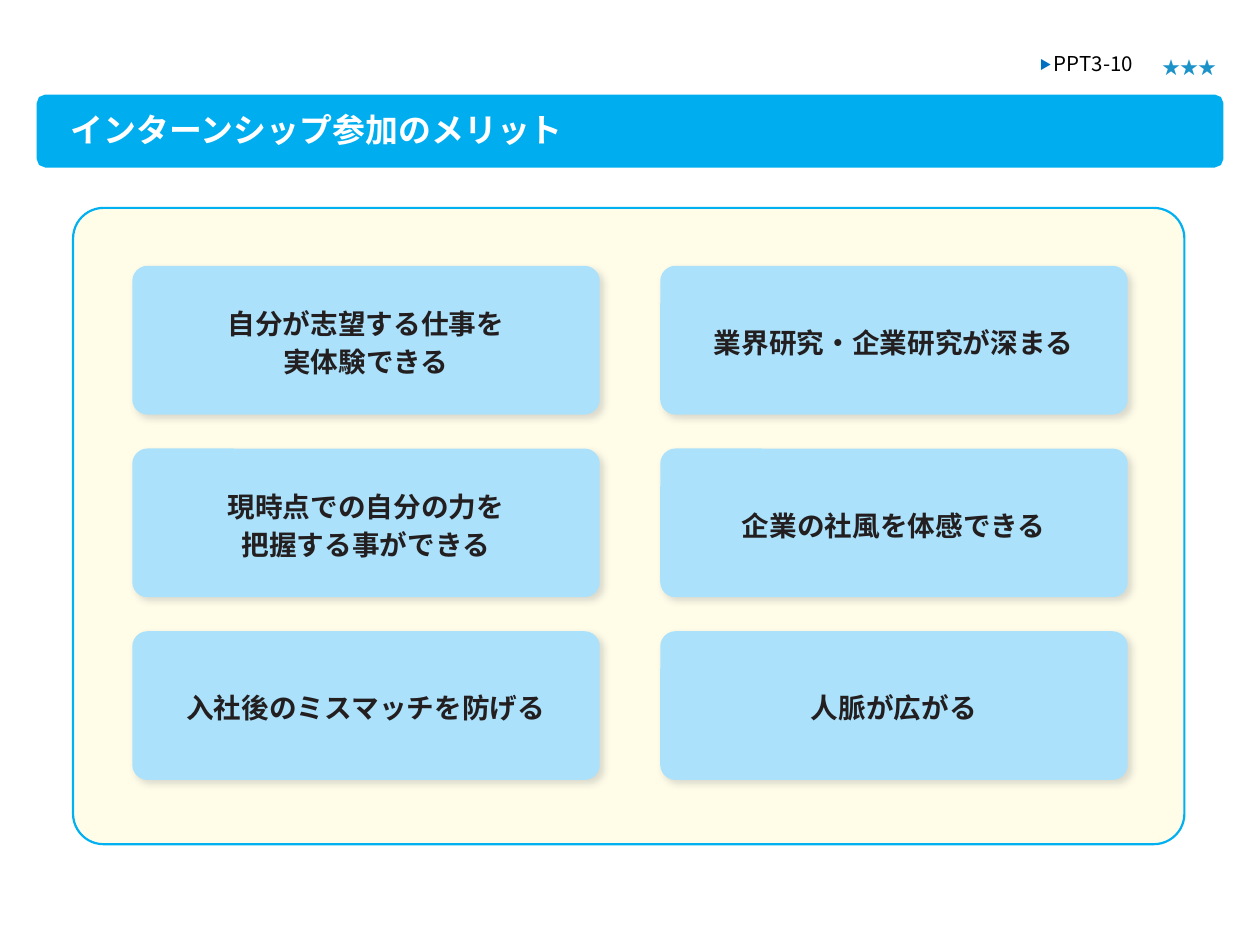
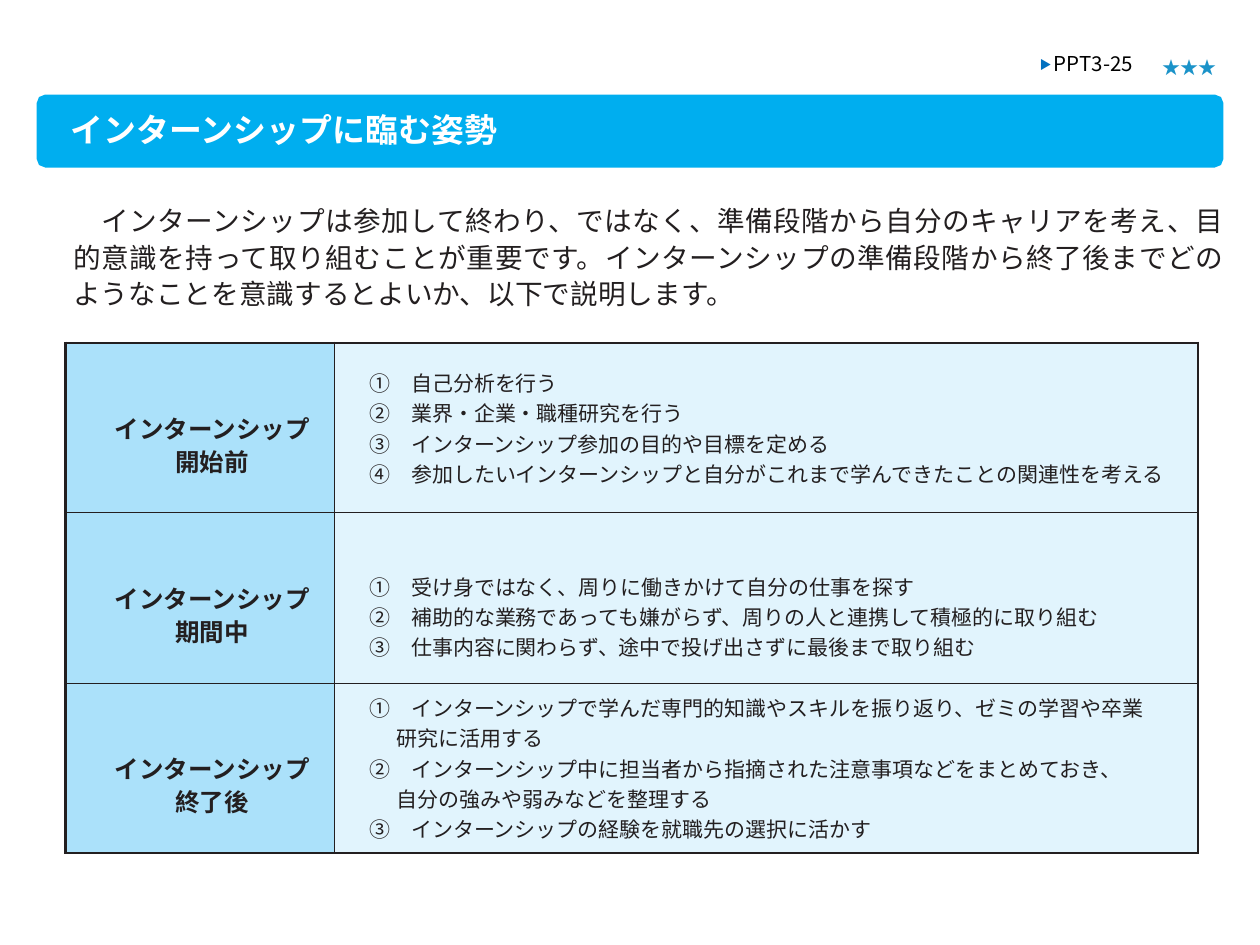
from lxml import etree
from pptx import Presentation
from pptx.dml.color import RGBColor
from pptx.enum.shapes import MSO_SHAPE
from pptx.enum.text import MSO_ANCHOR, MSO_AUTO_SIZE, PP_ALIGN
from pptx.oxml.ns import qn
from pptx.util import Inches, Pt

ROUNDED = MSO_SHAPE.ROUNDED_RECTANGLE
MIDDLE, TOP = MSO_ANCHOR.MIDDLE, MSO_ANCHOR.TOP
LEFT, CENTER, JUSTIFY = PP_ALIGN.LEFT, PP_ALIGN.CENTER, PP_ALIGN.JUSTIFY

FONT = "Noto Sans CJK JP"
INK, WHITE, BLACK = "231F20", "FFFFFF", "000000"
BAND, PANEL, PANEL_EDGE = "00AEEF", "FFFDE8", "00B0F0"
CARD, PALE = "ABE1FA", "E1F4FD"
ARROW, STAR, SHADOW = "0070C0", "1B93C9", "A6A6A6"

FRAME_FORMAT = {
    "margin_left": 0, "margin_top": 0, "margin_right": 0, "margin_bottom": 0,
    "word_wrap": True, "auto_size": MSO_AUTO_SIZE.NONE, "vertical_anchor": MIDDLE,
}


def paint(fill, color):
    fill.solid()
    fill.fore_color.rgb = RGBColor.from_string(color)


def write(frame, lines, size, color=INK, bold=False, align=LEFT, line_height=None):
    """Write one paragraph per line; a line is a string or a list of runs and line breaks."""
    for name, value in FRAME_FORMAT.items():
        setattr(frame, name, value)
    for number, line in enumerate(lines):
        paragraph = frame.add_paragraph() if number else frame.paragraphs[0]
        paragraph.alignment = align
        paragraph.space_before = Pt(0)
        if line_height:
            paragraph.line_spacing = Pt(line_height)
        for piece in [line] if isinstance(line, str) else line:
            if piece == "\n":
                paragraph.add_line_break()
                continue
            run = paragraph.add_run()
            run.text = piece
            run.font.size, run.font.bold, run.font.name = Pt(size), bold, FONT
            paint(run.font.fill, color)
            east_asian = etree.SubElement(run.font._element, qn("a:ea"))
            east_asian.set("typeface", FONT)


presentation = Presentation()
presentation.slide_width, presentation.slide_height = Inches(10), Inches(7.5)
title_only = presentation.slide_layouts[5]

# Band outline: one clipped corner, mirrored into all four
CORNER = [(0.16, 0), (0.07, 0), (0.02, 0.02), (0, 0.07), (0, 0.16)]
band_left, band_top, band_right, band_bottom = 0.29, 0.75, 9.71, 1.33
outline = [(band_left + x, band_top + y) for x, y in CORNER]
outline += [(band_left + x, band_bottom - y) for x, y in reversed(CORNER)]
outline += [(band_right - x, band_bottom - y) for x, y in CORNER]
outline += [(band_right - x, band_top + y) for x, y in reversed(CORNER)]
outline = [(Inches(x), Inches(y)) for x, y in outline]

# Parts found on both slides
slides = []
for heading, tag in [("インターンシップ参加のメリット", "PPT3-10"),
                     ("インターンシップに臨む姿勢", "PPT3-25")]:
    slide = presentation.slides.add_slide(title_only)
    slides.append(slide)

    builder = slide.shapes.build_freeform(*outline[0])
    builder.add_line_segments(outline[1:], close=True)
    band = builder.convert_to_shape()
    band.shadow.inherit = False
    paint(band.fill, BAND)
    band.line.fill.background()

    title = slide.shapes.title
    title.left, title.top = Inches(0.56), Inches(0.86)
    title.width, title.height = Inches(7.45), Inches(0.33)
    write(title.text_frame, [heading], 18.8, WHITE, bold=True)
    band.element.addnext(title.element)

    tag_box = slide.shapes.add_textbox(Inches(8.25), Inches(0.4), Inches(0.99), Inches(0.21))
    write(tag_box.text_frame, [["▶ ", tag]], 11.7, BLACK)
    arrow = tag_box.text_frame.paragraphs[0].runs[0]
    paint(arrow.font.fill, ARROW)
    arrow.font._element.set("baseline", "9000")

    stars = slide.shapes.add_textbox(Inches(9.23), Inches(0.4), Inches(0.5), Inches(0.27))
    write(stars.text_frame, ["★★★"], 10.3, STAR)

merits_slide, attitude_slide = slides

# Slide 1: six merits on a panel
panel = merits_slide.shapes.add_shape(
    ROUNDED, Inches(0.58), Inches(1.65), Inches(8.82), Inches(5.05))
panel.adjustments[0] = 0.048
panel.shadow.inherit = False
paint(panel.fill, PANEL)
paint(panel.line.fill, PANEL_EDGE)
panel.line.width = Pt(1.25)

merits = [
    ["自分が志望する仕事を", "実体験できる"], ["業界研究・企業研究が深まる"],
    ["現時点での自分の力を", "把握する事ができる"], ["企業の社風を体感できる"],
    ["入社後のミスマッチを防げる"], ["人脈が広がる"],
]
for number, lines in enumerate(merits):
    row, column = divmod(number, 2)
    card = merits_slide.shapes.add_shape(
        ROUNDED, Inches(1.05 + 4.19 * column), Inches(2.11 + 1.45 * row),
        Inches(3.71), Inches(1.18))
    card.adjustments[0] = 0.102
    paint(card.fill, CARD)
    card.line.fill.background()
    card.shadow.inherit = False
    shadow = etree.SubElement(
        card.element.spPr.find(qn("a:effectLst")), qn("a:outerShdw"),
        blurRad=str(Pt(4)), dist=str(Pt(3)), dir="2700000", algn="tl", rotWithShape="0")
    shadow_color = etree.SubElement(shadow, qn("a:srgbClr"), val=SHADOW)
    etree.SubElement(shadow_color, qn("a:alpha"), val="40000")
    write(card.text_frame, lines, 15.8, bold=True, align=CENTER, line_height=21.6)

# Slide 2: introduction and table of three phases
intro = attitude_slide.shapes.add_textbox(Inches(0.58), Inches(1.59), Inches(9.14), Inches(0.87))
write(intro.text_frame, [
    "　インターンシップは参加して終わり、ではなく、準備段階から自分のキャリアを考え、"
    "目的意識を持って取り組むことが重要です。インターンシップの準備段階から終了後まで"
    "どのようなことを意識するとよいか、以下で説明します。"
], 15.8, align=JUSTIFY, line_height=21)

# Each phase: label, actions, anchor, top margin and right margin of the actions
phases = [
    ("開始前", [
        "①　自己分析を行う",
        "②　業界・企業・職種研究を行う",
        "③　インターンシップ参加の目的や目標を定める",
        "④　参加したいインターンシップと自分がこれまで学んできたことの関連性を考える",
    ], MIDDLE, 0, 0),
    ("期間中", [
        "①　受け身ではなく、周りに働きかけて自分の仕事を探す",
        "②　補助的な業務であっても嫌がらず、周りの人と連携して積極的に取り組む",
        "③　仕事内容に関わらず、途中で投げ出さずに最後まで取り組む",
    ], TOP, 0.46, 0),
    ("終了後", [
        "①　インターンシップで学んだ専門的知識やスキルを振り返り、ゼミの学習や卒業研究に活用する",
        ["②　インターンシップ中に担当者から指摘された注意事項などをまとめておき、", "\n",
         "自分の強みや弱みなどを整理する"],
        "③　インターンシップの経験を就職先の選択に活かす",
    ], MIDDLE, 0, 0.35),
]
table = attitude_slide.shapes.add_table(
    len(phases), 2, Inches(0.52), Inches(2.72), Inches(8.99), Inches(4.05)).table
table.first_row = table.horz_banding = False
table.columns[0].width, table.columns[1].width = Inches(2.13), Inches(6.86)

for row, (phase, actions, anchor, top_margin, right_margin) in enumerate(phases):
    label_cell, action_cell = table.cell(row, 0), table.cell(row, 1)
    write(label_cell.text_frame, ["インターンシップ", phase], 14,
          bold=True, align=CENTER, line_height=18.6)
    write(action_cell.text_frame, actions, 12, line_height=17.4)
    for paragraph in action_cell.text_frame.paragraphs:
        properties = paragraph._p.get_or_add_pPr()
        properties.set("marL", str(Inches(0.5)))
        properties.set("indent", str(Inches(-0.22)))

    label_format = {"margin_left": Inches(0.2), "margin_top": Inches(0.56),
                    "margin_right": 0, "margin_bottom": 0, "vertical_anchor": TOP}
    action_format = {"margin_left": 0, "margin_top": Inches(top_margin),
                     "margin_right": Inches(right_margin), "margin_bottom": 0,
                     "vertical_anchor": anchor}
    for column, (cell, cell_format, color) in enumerate([
            (label_cell, label_format, CARD), (action_cell, action_format, PALE)]):
        for name, value in cell_format.items():
            setattr(cell, name, value)
        outer_sides = {"a:lnL": column == 0, "a:lnR": column == 1,
                       "a:lnT": row == 0, "a:lnB": row == len(phases) - 1}
        cell_properties = cell._tc.get_or_add_tcPr()
        for side, is_outer in outer_sides.items():
            border = etree.SubElement(
                cell_properties, qn(side), w=str(Pt(1.5 if is_outer else 0.5)))
            border_fill = etree.SubElement(border, qn("a:solidFill"))
            etree.SubElement(border_fill, qn("a:srgbClr"), val=INK)
        paint(cell.fill, color)

presentation.save("out.pptx")
